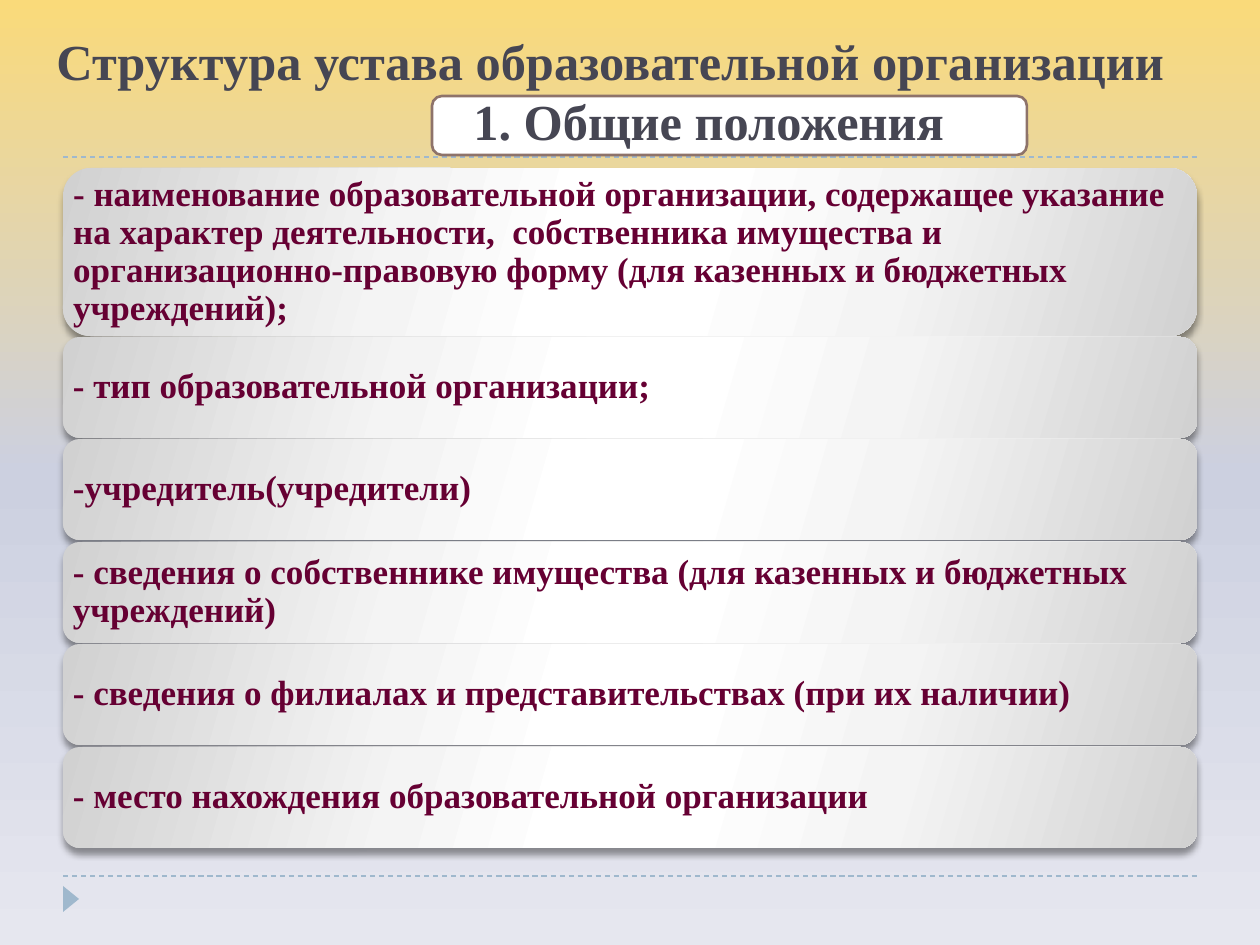
from lxml import etree
from pptx import Presentation
from pptx.dml.color import RGBColor
from pptx.enum.dml import MSO_LINE
from pptx.enum.shapes import MSO_CONNECTOR, MSO_SHAPE
from pptx.enum.text import MSO_ANCHOR, PP_ALIGN
from pptx.oxml.ns import qn
from pptx.util import Emu, Pt

ROUNDED = MSO_SHAPE.ROUNDED_RECTANGLE
TRIANGLE = MSO_SHAPE.ISOSCELES_TRIANGLE
STRAIGHT = MSO_CONNECTOR.STRAIGHT
DASH = MSO_LINE.DASH
MIDDLE, BOTTOM = MSO_ANCHOR.MIDDLE, MSO_ANCHOR.BOTTOM
LEFT = PP_ALIGN.LEFT

FONT = "Times New Roman"
COLORS = {
    "title": "464653",
    "item": "660033",
    "accent": "9FB8CD",
    "frame": "8E736A",
    "white": "FFFFFF",
    "shadow": "000000",
}
SKY = [(0, "FADA7A"), (50, "CCD0E0"), (100, "E6E7EF")]
SILVER = [(0, "D1D1D1"), (30, "F4F4F4"), (45, "FFFFFF"),
          (55, "FFFFFF"), (73, "F4F4F4"), (100, "D1D1D1")]
CORNER_INSET = 0.05


def px(length):
    return Emu(round(length * 914400 / 126))


def color(name):
    return RGBColor.from_string(COLORS[name])


def add_child(parent, tag, **attributes):
    values = {key: str(value) for key, value in attributes.items()}
    return etree.SubElement(parent, qn(tag), values)


def set_gradient(properties, stops, angle):
    solid = properties.find(qn("a:solidFill"))
    gradient = etree.Element(qn("a:gradFill"), {"rotWithShape": "1"})
    stop_list = add_child(gradient, "a:gsLst")
    for position, shade in stops:
        stop = add_child(stop_list, "a:gs", pos=position * 1000)
        add_child(stop, "a:srgbClr", val=shade)
    add_child(gradient, "a:lin", ang=angle * 60000, scaled=0)
    properties.replace(solid, gradient)


def write(paragraph, text, size, tone, spacing=1.0, indent=0):
    paragraph.alignment = LEFT
    paragraph.line_spacing = spacing
    if indent:
        paragraph._p.get_or_add_pPr().set("marL", str(px(indent)))
    run = paragraph.add_run()
    run.text = text
    run.font.name = FONT
    run.font.size = Pt(size)
    run.font.bold = True
    run.font.color.rgb = color(tone)


class CharterSlide:
    def __init__(self, slide):
        self.slide = slide
        self.shapes = slide.shapes

    def background(self, stops):
        self.slide.background.fill.solid()
        set_gradient(self.slide._element.find(".//" + qn("p:bgPr")), stops, 90)

    def rule(self, left, right, y):
        rule = self.shapes.add_connector(STRAIGHT, px(left), px(y), px(right), px(y))
        rule.line.color.rgb = color("accent")
        rule.line.width = Pt(0.75)
        rule.line.dash_style = DASH
        add_child(rule._element.spPr, "a:effectLst")

    def box(self, preset, left, top, width, height, fill, border=None):
        box = self.shapes.add_shape(preset, px(left), px(top), px(width), px(height))
        box.fill.solid()
        box.fill.fore_color.rgb = color(fill)
        if border:
            box.line.color.rgb = color(border)
            box.line.width = Pt(1.5)
        else:
            box.line.fill.background()
        box.shadow.inherit = False
        return box

    def title(self, left, top, width, height, heading, section, indent):
        frame = self.shapes.add_textbox(px(left), px(top), px(width), px(height)).text_frame
        frame.word_wrap = True
        frame.vertical_anchor = BOTTOM
        write(frame.paragraphs[0], heading, 28.8, "title")
        write(frame.add_paragraph(), section, 28.8, "title", indent=indent)

    def item(self, left, top, width, height, text):
        panel = self.box(ROUNDED, left, top, width, height, "white")
        properties = panel._element.spPr
        set_gradient(properties, SILVER, 16)
        shadow = add_child(properties.find(qn("a:effectLst")), "a:outerShdw",
                           blurRad=Pt(4), dist=Pt(3.4), dir=90 * 60000, rotWithShape=0)
        add_child(add_child(shadow, "a:srgbClr", val=COLORS["shadow"]),
                  "a:alpha", val=40000)
        frame = panel.text_frame
        frame.word_wrap = True
        frame.vertical_anchor = MIDDLE
        inset = px(10 - round(CORNER_INSET * height))
        frame.margin_left = frame.margin_right = inset
        frame.margin_top = frame.margin_bottom = inset
        write(frame.paragraphs[0], text, 20, "item", spacing=0.9)


def main():
    presentation = Presentation()
    presentation.slide_width, presentation.slide_height = px(1260), px(945)
    charter = CharterSlide(presentation.slides.add_slide(presentation.slide_layouts[6]))

    charter.background(SKY)
    for y in (876, 157):
        charter.rule(63, 1197, y)
    charter.box(TRIANGLE, 58, 891, 26, 16, "accent").rotation = 90
    charter.box(ROUNDED, 432, 96, 595, 59, "white", border="frame")
    charter.title(44, 21, 1160, 136, "Структура устава образовательной организации",
                  "1. Общие положения", indent=417)

    charter.item(63, 168, 1134, 168,
                 "- наименование образовательной организации, содержащее указание "
                 "на характер деятельности,  собственника имущества и "
                 "организационно-правовую форму (для казенных и бюджетных учреждений);")
    short_items = [
        "- тип образовательной организации;",
        "-учредитель(учредители)",
        "- сведения о собственнике имущества (для казенных и бюджетных учреждений)",
        "- сведения о филиалах и представительствах (при их наличии)",
        "- место нахождения образовательной организации",
    ]
    for row, text in enumerate(short_items):
        charter.item(63, 337 + row * 410 // 4, 1134, 101, text)

    presentation.save("out.pptx")


if __name__ == "__main__":
    main()
